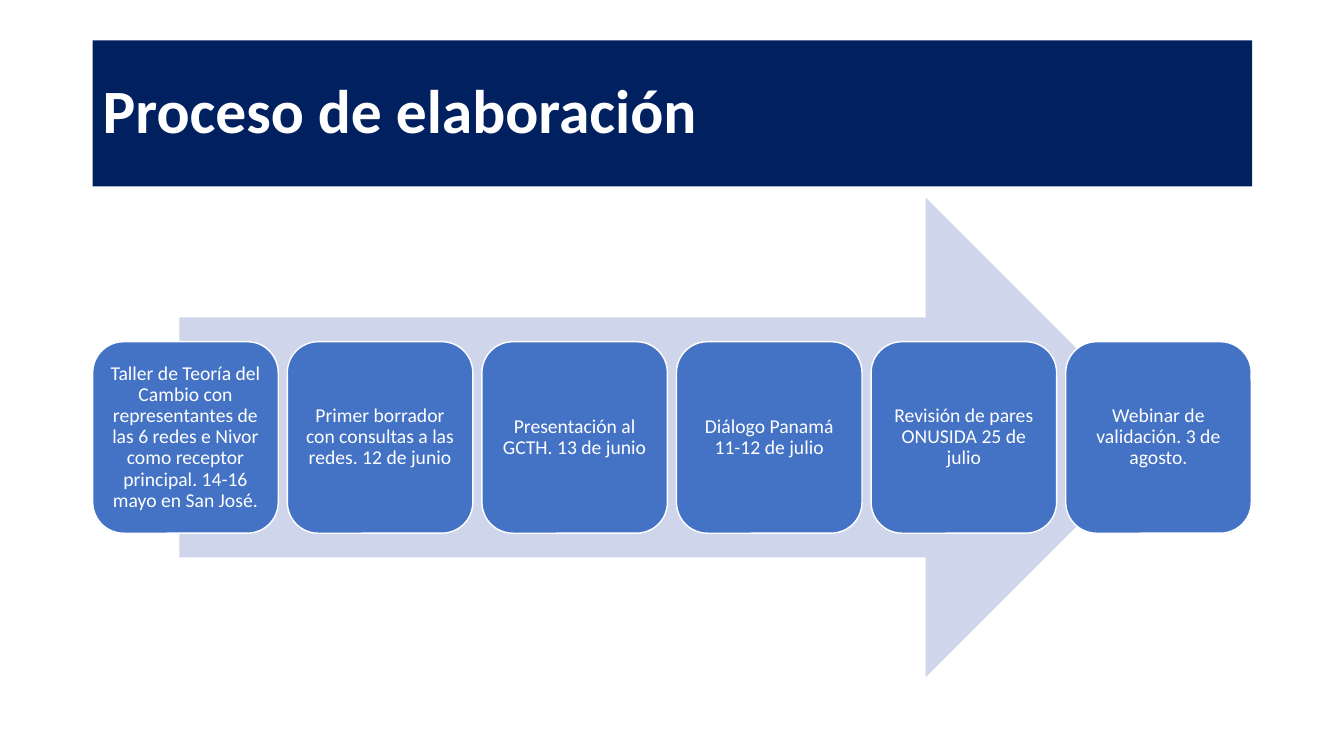
import pptx
import pptx.util
import pptx.dml.color
import pptx.enum.shapes
import pptx.enum.text
from pptx.util import Inches

FONT = "Calibri"
NAVY, BLUE, PALE_BLUE, WHITE = "002060", "4472C4", "CFD5EA", "FFFFFF"

STEPS = [
    "Taller de Teoría del Cambio con representantes de las 6 redes e Nivor "
    "como receptor principal. 14-16 mayo en San José.",
    "Primer borrador con consultas a las redes. 12 de junio",
    "Presentación al GCTH. 13 de junio",
    "Diálogo Panamá 11-12 de julio",
    "Revisión de pares ONUSIDA 25 de julio",
    "Webinar de validación. 3 de agosto.",
]
LEFT = 0.92
STEP_WIDTH, STEP_PITCH = 1.84, 1.93


def rgb(hex_colour):
    return pptx.dml.color.RGBColor.from_string(hex_colour)


def add_block(slide, preset, left, top, width, height, fill, outline=None):
    block = slide.shapes.add_shape(
        preset, Inches(left), Inches(top), Inches(width), Inches(height))
    block.shadow.inherit = False
    block.fill.solid()
    block.fill.fore_color.rgb = rgb(fill)
    if outline:
        block.line.color.rgb = rgb(outline)
        block.line.width = pptx.util.Pt(1)
    else:
        block.line.fill.background()
    return block


def write_text(block, text, size, align, side_inset, end_inset, bold=False):
    frame = block.text_frame
    frame.word_wrap = True
    frame.vertical_anchor = pptx.enum.text.MSO_ANCHOR.MIDDLE
    frame.margin_left = frame.margin_right = Inches(side_inset)
    frame.margin_top = frame.margin_bottom = Inches(end_inset)
    paragraph = frame.paragraphs[0]
    paragraph.alignment = align
    paragraph.line_spacing = 0.9
    run = paragraph.add_run()
    run.text = text
    run.font.name = FONT
    run.font.size = pptx.util.Pt(size)
    run.font.bold = bold
    run.font.color.rgb = rgb(WHITE)


def main():
    presets = pptx.enum.shapes.MSO_SHAPE
    aligns = pptx.enum.text.PP_ALIGN
    deck = pptx.Presentation()
    deck.slide_width, deck.slide_height = Inches(13.33), Inches(7.5)
    slide = deck.slides.add_slide(deck.slide_layouts[6])

    # Title banner
    banner = add_block(slide, presets.RECTANGLE, LEFT, 0.4, 11.5, 1.45, NAVY)
    write_text(banner, "Proceso de elaboración", 44, aligns.LEFT, 0.1, 0.05,
               bold=True)

    # Arrow behind the steps
    add_block(slide, presets.RIGHT_ARROW, 1.78, 1.96, 9.78, 4.76, PALE_BLUE)

    # Steps, evenly spaced along the arrow
    for index, step_text in enumerate(STEPS):
        step = add_block(slide, presets.ROUNDED_RECTANGLE,
                         LEFT + index * STEP_PITCH, 3.39, STEP_WIDTH, 1.9,
                         BLUE, outline=WHITE)
        write_text(step, step_text, 14, aligns.CENTER, 0.06, 0.06)

    deck.save("out.pptx")


if __name__ == "__main__":
    main()
